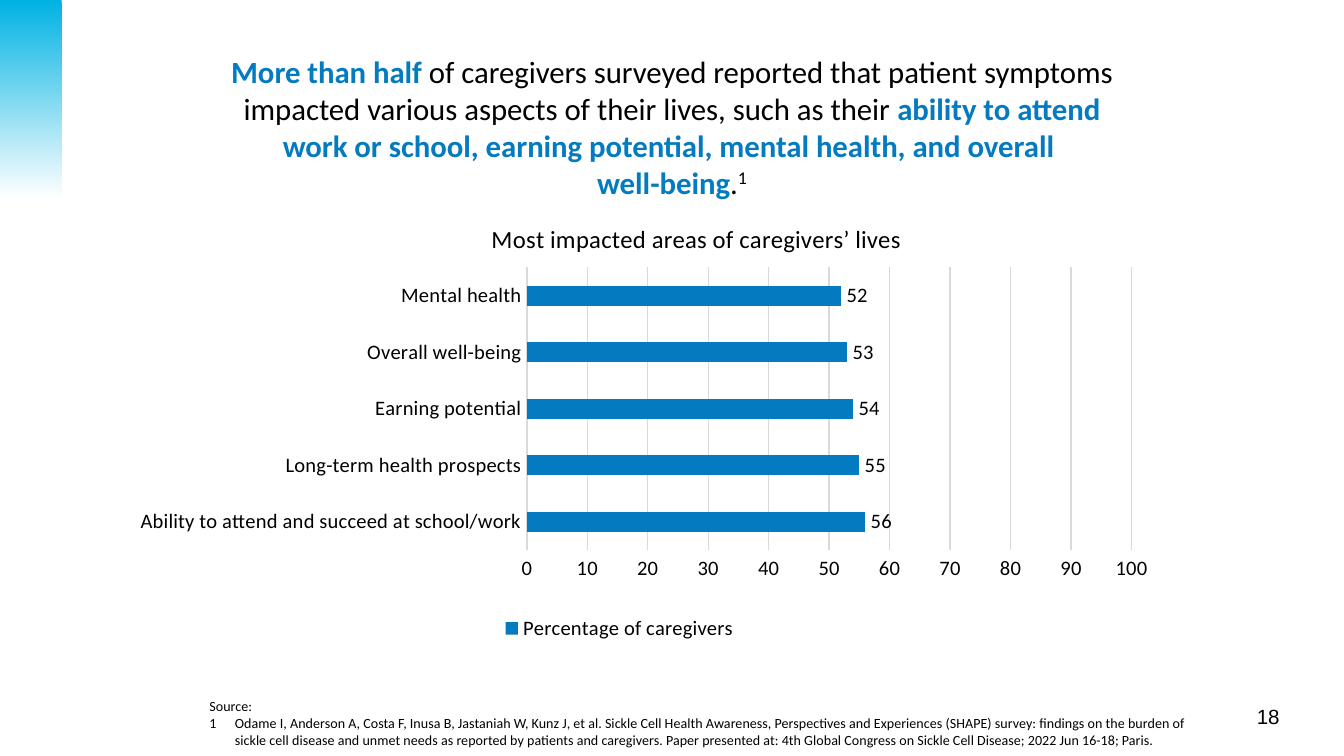
from lxml.etree import SubElement as Sub
from pptx import Presentation
from pptx.chart.data import CategoryChartData as Data
from pptx.dml.color import RGBColor as RGB
from pptx.enum.chart import XL_CHART_TYPE as Kind, XL_LABEL_POSITION as Spot
from pptx.enum.chart import XL_LEGEND_POSITION as Side, XL_TICK_MARK as Tick
from pptx.enum.shapes import MSO_SHAPE as Form
from pptx.enum.text import PP_ALIGN as Align
from pptx.oxml import parse_xml
from pptx.oxml.ns import qn
from pptx.util import Inches, Pt

W = 10
H = W * 9 / 16
BLUE, BLACK, GREY = "047BC1", "000000", "D9D9D9"
FONT = "Calibri"

HEAD = [
    ("More than half ", BLUE),
    ("of caregivers surveyed reported that patient symptoms impacted various "
     "aspects of their lives, such as their ", BLACK),
    ("ability to attend work or school, earning potential, mental health, and overall ", BLUE),
    None,
    ("well-being", BLUE),
    (".", BLACK),
]
NOTE = ("Odame I, Anderson A, Costa F, Inusa B, Jastaniah W, Kunz J, et al. "
        "Sickle Cell Health Awareness, Perspectives and Experiences (SHAPE) survey: "
        "findings on the burden of sickle cell disease and unmet needs as reported by "
        "patients and caregivers. Paper presented at: 4th Global Congress on Sickle Cell "
        "Disease; 2022 Jun 16-18; Paris.")
TITLE = "Most impacted areas of caregivers’ lives"
SERIES = "Percentage of caregivers"
AREAS = {
    "Ability to attend and succeed at school/work": 56,
    "Long-term health prospects": 55,
    "Earning potential": 54,
    "Overall well-being": 53,
    "Mental health": 52,
}


def rgb(code):
    return RGB.from_string(code)


def box(*at):
    return [Inches(n) for n in at]


def style(font, size, color=BLACK, name=FONT, bold=False):
    font.size, font.name, font.bold = Pt(size), name, bold
    font.color.rgb = rgb(color)


def frame(at, pad=(0.1, 0.05)):
    text = slide.shapes.add_textbox(*box(*at)).text_frame
    text.word_wrap = True
    text.margin_left = text.margin_right = Inches(pad[0])
    text.margin_top = text.margin_bottom = Inches(pad[1])
    return text


def write(para, words, size, **look):
    run = para.add_run()
    run.text = words
    style(run.font, size, **look)
    return run


def place(node, index, **parts):
    for old in node.findall(qn("c:layout")):
        node.remove(old)
    tags = "".join(f'<c:{key} val="{val}"/>' for key, val in parts.items())
    node.insert(index, parse_xml(
        '<c:layout xmlns:c="http://schemas.openxmlformats.org/drawingml/2006/chart">'
        f"<c:manualLayout>{tags}</c:manualLayout></c:layout>"))


deck = Presentation()
deck.slide_width, deck.slide_height = box(W, H)
slide = deck.slides.add_slide(deck.slide_layouts[6])

para = frame((8.45, 5.19, 1.17, 0.29)).paragraphs[0]
para.alignment = Align.RIGHT
write(para, "18", 11, name="Arial")

band = slide.shapes.add_shape(Form.RECTANGLE, *box(0, 0, 0.46, 1.48))
band.shadow.inherit = False
band.line.fill.background()
band.fill.gradient()
band.fill.gradient_angle = 270
for stop, code, pos in zip(band.fill.gradient_stops, ("00B2E3", "FFFFFF"), (0, 1)):
    stop.color.rgb, stop.position = rgb(code), pos

para = frame((1.54, 0.35, 6.92, 1.19), (0.07, 0.04)).paragraphs[0]
para.alignment = Align.CENTER
for part in HEAD:
    if part:
        words, color = part
        write(para, words, 16.5, color=color, bold=color == BLUE)
    else:
        para.add_line_break()
mark = write(para, "1", 16.5)
mark.font._element.set("baseline", "30000")

text = frame((1.46, 5.14, 7.47, 0.48))
write(text.paragraphs[0], "Source:", 7.5)
para = text.add_paragraph()
write(para, NOTE, 7.5)
props = para._p.get_or_add_pPr()
props.set("marL", str(Inches(0.19)))
props.set("indent", str(-Inches(0.19)))
Sub(props, qn("a:buAutoNum"), type="arabicPlain")

data = Data()
data.categories = list(AREAS)
data.add_series(SERIES, list(AREAS.values()))
chart = slide.shapes.add_chart(Kind.BAR_CLUSTERED, *box(0.6, 1.53, 8.02, 3.28), data).chart
style(chart.font, 11)

chart.has_title = True
title = chart.chart_title
write(title.text_frame.paragraphs[0], TITLE, 13.2)
place(title._element, 1, xMode="edge", yMode="edge", x=0.377, y=0.027)
place(chart._chartSpace.chart.plotArea, 0, layoutTarget="inner", xMode="edge",
      yMode="edge", x=0.414, y=0.14, w=0.561, h=0.642)

chart.has_legend = True
chart.legend.position = Side.BOTTOM
chart.legend.include_in_layout = False
style(chart.legend.font, 11)

cats, vals = chart.category_axis, chart.value_axis
for axis in (cats, vals):
    axis.major_tick_mark = axis.minor_tick_mark = Tick.NONE
    style(axis.tick_labels.font, 11)
vals.minimum_scale, vals.maximum_scale, vals.major_unit = 0, 100, 10
vals.format.line.fill.background()
vals.has_major_gridlines = True
for line in (cats.format.line, vals.major_gridlines.format.line):
    line.color.rgb, line.width = rgb(GREY), Pt(0.75)

plot = chart.plots[0]
plot.gap_width, plot.vary_by_categories = 182, False
bars = plot.series[0]
bars.format.fill.solid()
bars.format.fill.fore_color.rgb = rgb(BLUE)
labels = bars.data_labels
labels.show_value, labels.position = True, Spot.OUTSIDE_END
style(labels.font, 11)

deck.save("out.pptx")
